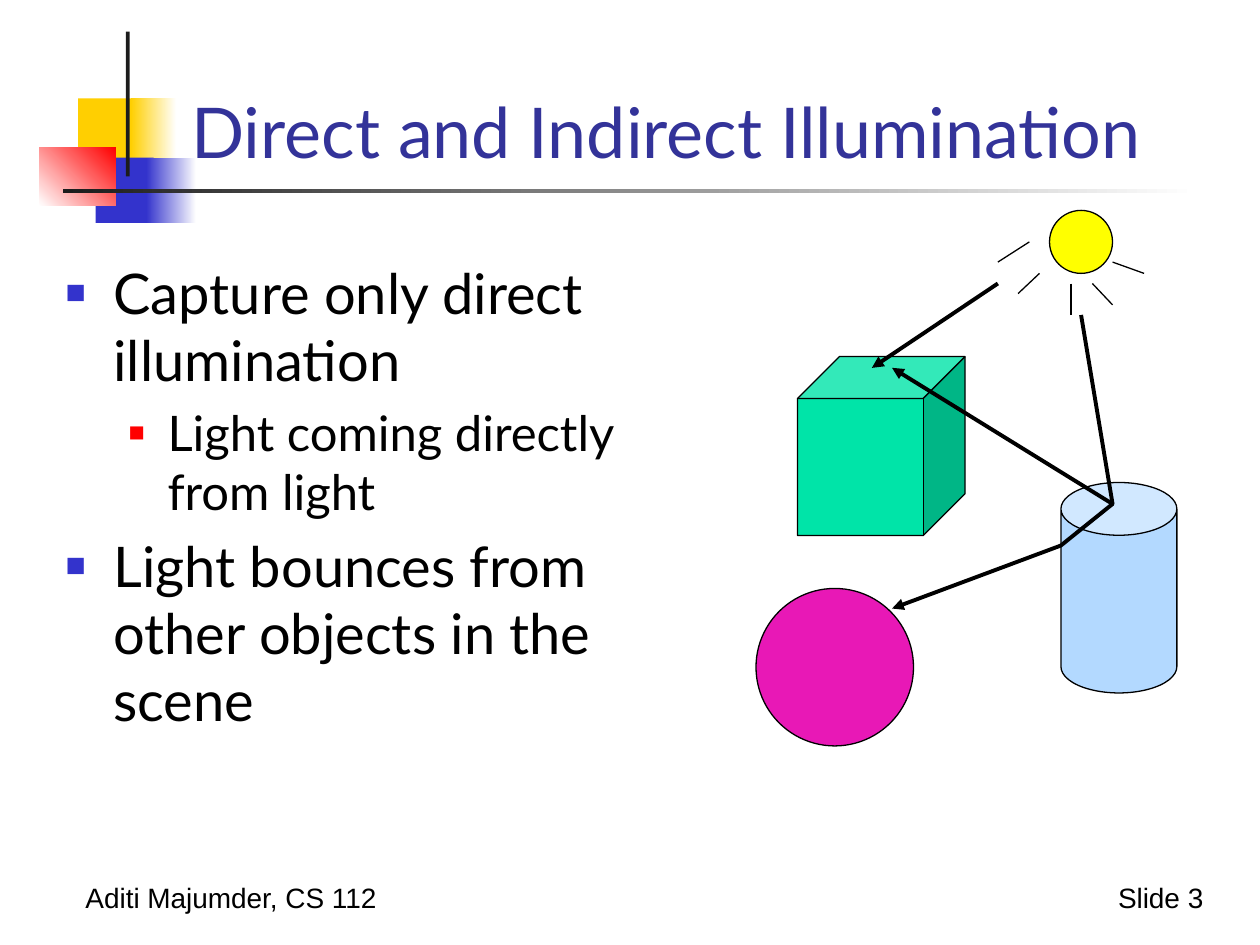
from dataclasses import dataclass
from typing import Optional

from lxml import etree
from pptx import Presentation
from pptx.dml.color import RGBColor
from pptx.enum.shapes import MSO_CONNECTOR, MSO_SHAPE
from pptx.enum.text import MSO_ANCHOR, MSO_AUTO_SIZE, PP_ALIGN
from pptx.oxml.ns import qn
from pptx.util import Inches, Pt

RECTANGLE = MSO_SHAPE.RECTANGLE
OVAL = MSO_SHAPE.OVAL
CUBE = MSO_SHAPE.CUBE
CAN = MSO_SHAPE.CAN
STRAIGHT = MSO_CONNECTOR.STRAIGHT
LEFT = PP_ALIGN.LEFT
RIGHT = PP_ALIGN.RIGHT

BLACK = RGBColor(0x00, 0x00, 0x00)
WHITE = RGBColor(0xFF, 0xFF, 0xFF)
CHARCOAL = RGBColor(0x1C, 0x1C, 0x1C)
GOLD = RGBColor(0xFF, 0xCF, 0x01)
BLUE = RGBColor(0x33, 0x33, 0xCC)
RED = RGBColor(0xFF, 0x00, 0x00)
TITLE_BLUE = RGBColor(0x33, 0x33, 0x99)
GREEN = RGBColor(0x00, 0xE4, 0xA8)
SKY = RGBColor(0x33, 0x99, 0xFF)
YELLOW = RGBColor(0xFF, 0xFF, 0x00)
MAGENTA = RGBColor(0xE8, 0x18, 0xB6)

HEADING_FONT = "Lato"
FOOTER_FONT = "Arial"
THIN = 0.75
THICK = 2.25

Point = tuple[float, float]
Frame = tuple[float, float, float, float]


@dataclass(frozen=True)
class Block:
    frame: Frame
    color: RGBColor
    fade_to: Optional[RGBColor] = None
    angle: float = 0


@dataclass(frozen=True)
class Solid:
    kind: MSO_SHAPE
    frame: Frame
    color: RGBColor
    adjustment: Optional[float] = None
    opacity: Optional[int] = None


@dataclass(frozen=True)
class Level:
    size: int
    margin: float
    hanging: float
    bullet_color: RGBColor
    bullet_percent: int


@dataclass(frozen=True)
class Footer:
    frame: Frame
    text: str
    align: PP_ALIGN


BLOCKS = [
    Block((0.62, 0.78, 0.48, 0.52), GOLD),
    Block((1.04, 0.78, 0.36, 0.52), GOLD, WHITE),
    Block((0.76, 1.25, 0.46, 0.52), BLUE),
    Block((1.16, 1.25, 0.4, 0.52), BLUE, WHITE),
    Block((0.31, 1.17, 0.61, 0.46), WHITE, RED, 45),
    Block((1, 0.25, 0.03, 1.15), CHARCOAL),
    Block((0.5, 1.5, 9, 0.03), CHARCOAL, WHITE),
]
FOOTERS = [
    Footer((0.58, 6.94, 2.55, 0.37), "Aditi Majumder, CS 112", LEFT),
    Footer((8.62, 6.94, 1.03, 0.37), "Slide 3", RIGHT),
]
LEVELS = [
    Level(32, 0.38, 0.38, BLUE, 60),
    Level(28, 0.81, 0.31, RED, 55),
]
BULLETS = [
    (0, "Capture only direct illumination"),
    (1, "Light coming directly from light"),
    (0, "Light bounces from other objects in the scene"),
]
SOLIDS = [
    Solid(CUBE, (6.33, 2.83, 1.33, 1.42), GREEN, 0.25),
    Solid(CAN, (8.42, 3.83, 0.92, 1.67), SKY, 0.455, 37),
    Solid(OVAL, (8.33, 1.67, 0.5, 0.5), YELLOW),
    Solid(OVAL, (6, 4.67, 1.25, 1.25), MAGENTA),
]
SUN_RAYS = [
    ((8.17, 1.92), (7.92, 2.08)),
    ((8.25, 2.17), (8.08, 2.33)),
    ((8.5, 2.25), (8.5, 2.5)),
    ((8.67, 2.25), (8.83, 2.42)),
    ((8.83, 2.08), (9.08, 2.17)),
]
DIRECT_LIGHT = ((7.92, 2.25), (6.92, 2.92))
BOUNCES = [
    [(8.58, 2.5), (8.83, 4), (7.08, 2.92)],
    [(8.83, 4), (8.42, 4.33), (7.08, 4.83)],
]


def place(box, frame: Frame) -> None:
    box.left, box.top, box.width, box.height = map(Inches, frame)


def set_line(line, width: float, arrow: bool = False) -> None:
    line.color.rgb = BLACK
    line.width = Pt(width)
    if arrow:
        etree.SubElement(line._get_or_add_ln(), qn("a:tailEnd"), type="triangle")


def draw_block(page, block: Block) -> None:
    shape = page.shapes.add_shape(RECTANGLE, *map(Inches, block.frame))
    shape.shadow.inherit = False
    shape.line.fill.background()
    if block.fade_to is None:
        shape.fill.solid()
        shape.fill.fore_color.rgb = block.color
        return
    shape.fill.gradient()
    shape.fill.gradient_angle = block.angle
    for stop, color in zip(shape.fill.gradient_stops, (block.color, block.fade_to)):
        stop.color.rgb = color


def draw_footer(page, footer: Footer) -> None:
    box = page.shapes.add_textbox(*map(Inches, footer.frame))
    box.text_frame.word_wrap = False
    para = box.text_frame.paragraphs[0]
    para.text = footer.text
    para.alignment = footer.align
    para.font.name, para.font.size = FOOTER_FONT, Pt(16)
    para.font.color.rgb = BLACK


def fill_title(title) -> None:
    place(title, (1.42, 0.25, 8.36, 1.17))
    frame = title.text_frame
    frame.text = "Direct and Indirect Illumination"
    frame.auto_size = MSO_AUTO_SIZE.NONE
    frame.vertical_anchor = MSO_ANCHOR.BOTTOM
    para = frame.paragraphs[0]
    para.alignment = LEFT
    para.font.name, para.font.size = HEADING_FONT, Pt(40)
    para.font.color.rgb = TITLE_BLUE


def format_bullet(para, depth: int) -> None:
    level = LEVELS[depth]
    para.level = depth
    para.space_before = Pt(level.size * 0.2)
    para.font.name, para.font.size = HEADING_FONT, Pt(level.size)
    para.font.color.rgb = BLACK
    properties = para._p.get_or_add_pPr()
    properties.set("marL", str(Inches(level.margin)))
    properties.set("indent", str(-Inches(level.hanging)))
    bullet_color = etree.Element(qn("a:buClr"))
    etree.SubElement(bullet_color, qn("a:srgbClr"), val=str(level.bullet_color))
    bullet_size = etree.Element(qn("a:buSzPct"), val=str(level.bullet_percent * 1000))
    bullet_char = etree.Element(qn("a:buChar"), char="■")
    position = properties.index(properties.find(qn("a:defRPr")))
    properties[position:position] = [bullet_color, bullet_size, bullet_char]


def fill_body(body) -> None:
    place(body, (0.42, 2, 4.67, 4.75))
    frame = body.text_frame
    frame.text = "\n".join(text for _, text in BULLETS)
    frame.auto_size = MSO_AUTO_SIZE.NONE
    for para, (depth, _) in zip(frame.paragraphs, BULLETS):
        format_bullet(para, depth)


def draw_solid(page, solid: Solid) -> None:
    shape = page.shapes.add_shape(solid.kind, *map(Inches, solid.frame))
    shape.shadow.inherit = False
    shape.fill.solid()
    shape.fill.fore_color.rgb = solid.color
    set_line(shape.line, THIN)
    if solid.adjustment is not None:
        shape.adjustments[0] = solid.adjustment
    if solid.opacity is not None:
        color = shape._element.spPr.find(qn("a:solidFill"))[0]
        etree.SubElement(color, qn("a:alpha"), val=str(solid.opacity * 1000))


def draw_ray(page, start: Point, end: Point, width: float, arrow: bool = False) -> None:
    ray = page.shapes.add_connector(STRAIGHT, *map(Inches, start + end))
    set_line(ray.line, width, arrow)
    etree.SubElement(ray._element.spPr, qn("a:effectLst"))


def draw_bounce(page, points: list[Point]) -> None:
    start, *rest = [(Inches(x), Inches(y)) for x, y in points]
    builder = page.shapes.build_freeform(*start)
    builder.add_line_segments(rest, close=False)
    bounce = builder.convert_to_shape()
    bounce.shadow.inherit = False
    bounce.fill.background()
    set_line(bounce.line, THICK, arrow=True)


def main() -> None:
    deck = Presentation()
    deck.slide_width, deck.slide_height = Inches(10), Inches(7.5)
    page = deck.slides.add_slide(deck.slide_layouts[1])
    for block in BLOCKS:
        draw_block(page, block)
    for footer in FOOTERS:
        draw_footer(page, footer)
    fill_title(page.shapes.title)
    fill_body(page.placeholders[1])
    for solid in SOLIDS:
        draw_solid(page, solid)
    for start, end in SUN_RAYS:
        draw_ray(page, start, end, THIN)
    draw_ray(page, *DIRECT_LIGHT, THICK, arrow=True)
    for points in BOUNCES:
        draw_bounce(page, points)
    deck.save("out.pptx")


if __name__ == "__main__":
    main()
